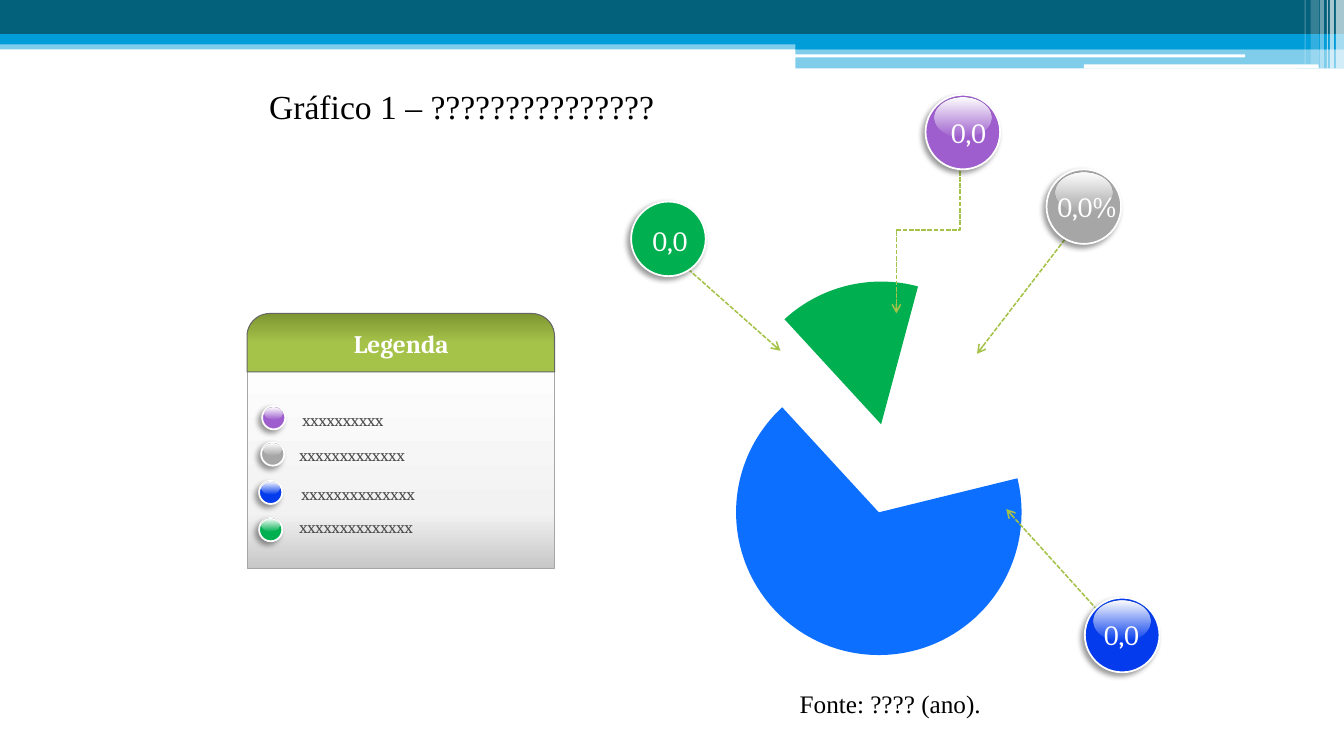
import collections
import pptx
import pptx.chart.data
import pptx.dml.color
import pptx.enum.chart
import pptx.enum.dml
import pptx.enum.shapes
import pptx.enum.text
import pptx.oxml
import pptx.oxml.ns
import pptx.util

PX = 9144  # one hundredth of an inch, in EMU
SHAPES = pptx.enum.shapes.MSO_SHAPE
ALIGN = pptx.enum.text.PP_ALIGN
Box = collections.namedtuple("Box", "left top width height")


class Theme:
    teal, sky, white, black = "04617B", "009DD9", "FFFFFF", "000000"
    olive, dark_olive, olive_edge = "A5C249", "7E9632", "666666"
    purple, gray, blue, green = "9E5ECE", "A6A6A6", "033BED", "00B050"
    slices = ("BA8BDD", "FFFFFF", "0D6FFF", "00B050")
    panel = ((0, "C7C7C7", 100), (25, "F2F2F2", 100), (100, "FFFFFF", 100))
    header = ((0, dark_olive, 100), (50, olive, 100), (100, olive, 100))
    gloss = ((0, white, 100), (50, white, 49), (100, white, 0))
    legend_text = "4D4D4D"
    body_font, caption_font = "Cambria", "Times New Roman"
    title_size, value_size, heading_size, legend_size = 24, 20, 18, 12


def rgb(color):
    return pptx.dml.color.RGBColor.from_string(color)


def within(box, left, top, width, height):
    return Box(box.left + left, box.top + top, width, height)


def emu(lengths):
    return [round(length * PX) for length in lengths]


def element(markup):
    """Parse one drawing element, declaring its namespace."""
    declared = pptx.oxml.ns.nsdecls("a")
    return pptx.oxml.parse_xml(markup.replace(">", f" {declared}>", 1))


def add_shape(shapes, kind, box, color=None, opacity=100, line=None, weight=0.75):
    shape = shapes.add_shape(kind, *emu(box))
    shape.shadow.inherit = False
    if color:
        shape.fill.solid()
        shape.fill.fore_color.rgb = rgb(color)
        if opacity < 100:
            paint = shape.fill._xPr.find(".//" + pptx.oxml.ns.qn("a:srgbClr"))
            paint.append(element(f'<a:alpha val="{opacity * 1000}"></a:alpha>'))
    if line:
        shape.line.color.rgb = rgb(line)
        shape.line.width = pptx.util.Pt(weight)
    else:
        shape.line.fill.background()
    return shape


def fill_gradient(shape, stops, angle):
    marks = "".join(
        f'<a:gs pos="{place * 1000}"><a:srgbClr val="{color}">'
        f'<a:alpha val="{opacity * 1000}"/></a:srgbClr></a:gs>'
        for place, color, opacity in stops)
    geometry = shape._element.spPr.find(pptx.oxml.ns.qn("a:prstGeom"))
    geometry.addnext(element(
        f'<a:gradFill><a:gsLst>{marks}</a:gsLst><a:lin ang="{angle * 60000}" scaled="0"/></a:gradFill>'))


def add_text(page, box, text, size, color, font=Theme.body_font,
             align=ALIGN.LEFT, bold=False, wrap=True):
    text_box = page.shapes.add_textbox(*emu(box))
    frame = text_box.text_frame
    frame.word_wrap = wrap
    frame.auto_size = pptx.enum.text.MSO_AUTO_SIZE.SHAPE_TO_FIT_TEXT
    frame.text = text
    para = frame.paragraphs[0]
    para.alignment = align
    span = para.runs[0]
    span.font.name, span.font.size = font, pptx.util.Pt(size)
    span.font.bold, span.font.color.rgb = bold, rgb(color)
    return para


def add_ball(page, left, top, size, color, glossy=True):
    """A white-rimmed ball with a drop shadow and a highlight."""
    group = page.shapes.add_group_shape()
    ball = add_shape(group.shapes, SHAPES.OVAL, Box(left, top, size, size), color,
                     line=Theme.white, weight=1.25)
    effects = ball._element.spPr.find(pptx.oxml.ns.qn("a:effectLst"))
    effects.append(element(
        '<a:outerShdw blurRad="50800" dist="38100" dir="8100000" algn="tr" rotWithShape="0">'
        f'<a:srgbClr val="{Theme.black}"><a:alpha val="40000"/></a:srgbClr></a:outerShdw>'))
    shine = Box(left + size * 0.12, top + size * 0.04, size * 0.76, size * 0.54)
    highlight = add_shape(group.shapes, SHAPES.OVAL, shine, None if glossy else color)
    if glossy:
        fill_gradient(highlight, Theme.gloss, 90)


def add_arrow(page, box, start, end, elbow=False):
    """A dashed arrow; an elbow one leaves and arrives vertically."""
    kind = pptx.enum.shapes.MSO_CONNECTOR.STRAIGHT
    if elbow:
        kind = pptx.enum.shapes.MSO_CONNECTOR.ELBOW
        middle = [(a + b) / 2 for a, b in zip(start, end)]
        half = abs(end[1] - start[1]) / 2, abs(end[0] - start[0]) / 2
        start = [m - h for m, h in zip(middle, half)]
        end = [m + h for m, h in zip(middle, half)]
    arrow = page.shapes.add_connector(kind, *emu((
        box.left + start[0], box.top + start[1], box.left + end[0], box.top + end[1])))
    if elbow:
        arrow.rotation = 90
    arrow.line.color.rgb = rgb(Theme.olive)
    arrow.line.width = pptx.util.Pt(1.1)
    arrow.line.dash_style = pptx.enum.dml.MSO_LINE.SQUARE_DOT
    arrow.line._get_or_add_ln().append(element('<a:tailEnd type="arrow"></a:tailEnd>'))
    arrow._element.spPr.append(element("<a:effectLst></a:effectLst>"))


def draw_banner(page, box):
    # Coloured bands and white rules
    right = 789
    wide = box.width - right
    for kind, left, top, width, height, color, opacity in (
            (SHAPES.RECTANGLE, 0, 40, box.width, 9, Theme.sky, 50),
            (SHAPES.RECTANGLE, 0, 0, box.width, 34, Theme.teal, 100),
            (SHAPES.RECTANGLE, 0, 34, box.width, 10, Theme.sky, 100),
            (SHAPES.RECTANGLE, right, 39, wide, 10, Theme.sky, 100),
            (SHAPES.RECTANGLE, right, 48, wide, 20, Theme.sky, 50),
            (SHAPES.ROUNDED_RECTANGLE, 788, 54, 447, 3, Theme.white, 100),
            (SHAPES.ROUNDED_RECTANGLE, 1075, 64, 233, 4, Theme.white, 100)):
        add_shape(page.shapes, kind, within(box, left, top, width, height), color, opacity)
    # Fading stripes at the right edge
    for left, width, height, opacity in (
            (1325, 8, 68, 65), (1319, 4, 68, 65), (1316, 1, 68, 60),
            (1309, 4, 68, 40), (1300, 8, 64, 20), (1294, 1, 64, 30)):
        add_shape(page.shapes, SHAPES.RECTANGLE, within(box, left, 0, width, height),
                  Theme.white, opacity)


def draw_pie(page, box):
    data = pptx.chart.data.CategoryChartData()
    data.categories = ["1", "2", "3", "4"]
    data.add_series("Series 1", (0, 17, 67, 16))
    chart = page.shapes.add_chart(pptx.enum.chart.XL_CHART_TYPE.PIE_EXPLODED, *emu(box), data).chart
    chart.has_title = chart.has_legend = False
    chart.font.name, chart.font.size = Theme.body_font, pptx.util.Pt(Theme.heading_size)
    chart.font.color.rgb = rgb(Theme.black)
    plot = chart.plots[0]
    plot.vary_by_categories = True
    for index, color in enumerate(Theme.slices):
        look = plot.series[0].points[index].format
        look.fill.solid()
        look.fill.fore_color.rgb = rgb(color)
        look.line.fill.background()
    # The empty first slice shows as a thin outline
    sliver = plot.series[0].points[0].format.line
    sliver.color.rgb, sliver.width = rgb(Theme.slices[0]), pptx.util.Pt(2)
    # Slice spread, first angle and plot size
    qn, declared = pptx.oxml.ns.qn, pptx.oxml.ns.nsdecls("c")
    pie = plot._element
    series = pie.find(qn("c:ser"))
    for old in series.findall(qn("c:explosion")):
        series.remove(old)
    series.find(qn("c:dPt")).addprevious(pptx.oxml.parse_xml(f'<c:explosion {declared} val="32"/>'))
    for old in pie.findall(qn("c:firstSliceAng")):
        pie.remove(old)
    pie.append(pptx.oxml.parse_xml(f'<c:firstSliceAng {declared} val="15"/>'))
    area = pie.getparent()
    for old in area.findall(qn("c:layout")):
        area.remove(old)
    side = 374
    sizes = (("x", (1 - side / box.width) / 2), ("y", (1 - side / box.height) / 2),
             ("w", side / box.width), ("h", side / box.height))
    places = "".join(f'<c:{name} val="{value:.3f}"/>' for name, value in sizes)
    area.insert(0, pptx.oxml.parse_xml(
        f'<c:layout {declared}><c:manualLayout><c:layoutTarget val="inner"/>'
        f'<c:xMode val="edge"/><c:yMode val="edge"/>{places}</c:manualLayout></c:layout>'))


def draw_chart_region(page, box):
    draw_pie(page, within(box, 0, 174, 573, 402))
    # Callouts: ball corner, value corner, arrow start and end
    for color, text, ball, value, start, end in (
            (Theme.gray, "0,0%", (440, 78), (424, 93), (477, 123), (371, 261)),
            (Theme.purple, "0,0", (320, 4), (306, 20), (354, 55), (291, 221)),
            (Theme.blue, "0,0", (478, 503), (458, 518), (511, 538), (400, 415)),
            (Theme.green, "0,0", (28, 110), (10, 127), (80, 173), (176, 258))):
        add_arrow(page, box, start, end, elbow=color == Theme.purple)
        add_ball(page, box.left + ball[0], box.top + ball[1], 74, color,
                 glossy=color != Theme.green)
        add_text(page, within(box, *value, 113, 44), text, Theme.value_size, Theme.white,
                 align=ALIGN.CENTER)


def draw_legend(page, box):
    # Panel and header
    panel = add_shape(page.shapes, SHAPES.RECTANGLE,
                      within(box, 0, 31, box.width, box.height - 31), line=Theme.gray)
    fill_gradient(panel, Theme.panel, 270)
    header = add_shape(page.shapes, SHAPES.ROUND_2_SAME_RECTANGLE,
                       within(box, 0, 0, box.width, 58), line=Theme.olive_edge)
    header.adjustments[0], header.adjustments[1] = 0.39, 0
    fill_gradient(header, Theme.header, 90)
    add_text(page, within(box, 3, 10, 300, 40), "Legenda", Theme.heading_size, Theme.white,
             align=ALIGN.CENTER, bold=True)
    # Entries
    for color, text, bead, label in (
            (Theme.purple, "xxxxxxxxxx", (15, 92), (45, 91)),
            (Theme.gray, "xxxxxxxxxxxxx", (14, 128), (42, 125)),
            (Theme.blue, "xxxxxxxxxxxxxx", (12, 166), (44, 164)),
            (Theme.green, "xxxxxxxxxxxxxx", (12, 203), (42, 197))):
        add_ball(page, box.left + bead[0], box.top + bead[1], 23, color)
        add_text(page, within(box, *label, 251, 30), text, Theme.legend_size, Theme.legend_text)


def draw_caption(page, box, text, size, space_before):
    para = add_text(page, box, text, size, Theme.black, Theme.caption_font,
                    ALIGN.CENTER, wrap=False)
    para.space_before, para.space_after = pptx.util.Pt(space_before), pptx.util.Pt(6)
    para._p.get_or_add_pPr().set("marL", str(50 * PX))


def main():
    deck = pptx.Presentation()
    deck.slide_width, deck.slide_height = emu((1333, 750))
    page = deck.slides.add_slide(deck.slide_layouts[6])
    draw_banner(page, Box(0, 0, 1333, 68))
    draw_chart_region(page, Box(598, 90, 573, 577))
    draw_legend(page, Box(245, 311, 305, 253))
    draw_caption(page, Box(205, 80, 456, 50), "Gráfico 1 – ???????????????", Theme.title_size, 6)
    draw_caption(page, Box(732, 678, 252, 40), "Fonte: ???? (ano).", Theme.heading_size, 0)
    deck.save("out.pptx")


if __name__ == "__main__":
    main()
